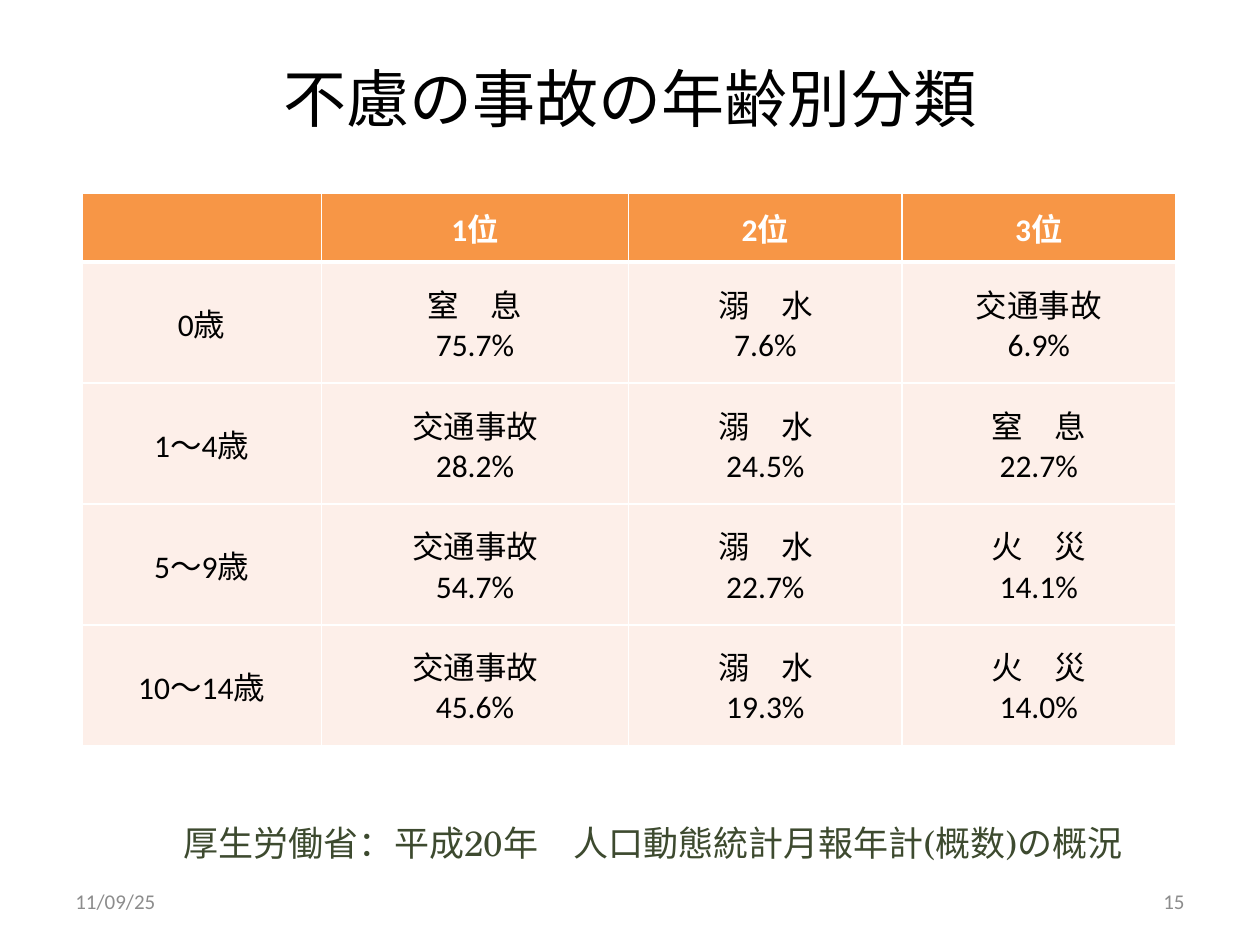
from lxml import etree
from pptx import Presentation
from pptx.dml.color import RGBColor
from pptx.enum.text import MSO_ANCHOR, PP_ALIGN
from pptx.oxml.ns import qn
from pptx.util import Inches, Pt

LEFT, CENTER, RIGHT = PP_ALIGN.LEFT, PP_ALIGN.CENTER, PP_ALIGN.RIGHT
TOP, MIDDLE = MSO_ANCHOR.TOP, MSO_ANCHOR.MIDDLE

BLACK = RGBColor(0x00, 0x00, 0x00)
WHITE = RGBColor(0xFF, 0xFF, 0xFF)
ORANGE = RGBColor(0xF7, 0x96, 0x46)
PALE_ORANGE = RGBColor(0xFD, 0xEF, 0xE9)
OLIVE = RGBColor(0x3D, 0x4A, 0x2F)
GREY = RGBColor(0x8C, 0x8C, 0x8C)

BODY_FONT = "Calibri"
SERIF_FONT = "TeX Gyre Schola"

COLUMN_WIDTHS = [1.9, 2.44, 2.17, 2.17]
HEADER_HEIGHT, ROW_HEIGHT = 0.55, 0.96
RANKING = [
    ["", "1位", "2位", "3位"],
    ["0歳", "窒　息\n75.7%", "溺　水\n7.6%", "交通事故\n6.9%"],
    ["1～4歳", "交通事故\n28.2%", "溺　水\n24.5%", "窒　息\n22.7%"],
    ["5～9歳", "交通事故\n54.7%", "溺　水\n22.7%", "火　災\n14.1%"],
    ["10～14歳", "交通事故\n45.6%", "溺　水\n19.3%", "火　災\n14.0%"],
]


def write(frame, text, size, font, color, align=LEFT, bold=False):
    frame.text = text
    for paragraph in frame.paragraphs:
        paragraph.alignment = align
        paragraph.font.size = Pt(size)
        paragraph.font.name = font
        paragraph.font.bold = bold
        paragraph.font.color.rgb = color


def add_label(slide, box, text, size, font, color, align=LEFT, anchor=MIDDLE):
    frame = slide.shapes.add_textbox(*map(Inches, box)).text_frame
    frame.word_wrap = True
    frame.vertical_anchor = anchor
    write(frame, text, size, font, color, align)


def set_borders(cell, widths):
    """Draw white cell borders; widths in points, keyed by side."""
    properties = cell._tc.get_or_add_tcPr()
    # Border lines must come before the fill, in the order L, R, T, B
    for index, side in enumerate("LRTB"):
        line = etree.Element(qn(f"a:ln{side}"), w=str(Pt(widths[side])))
        fill = etree.SubElement(line, qn("a:solidFill"))
        etree.SubElement(fill, qn("a:srgbClr"), val=str(WHITE))
        properties.insert(index, line)


def add_ranking_table(slide, box):
    table = slide.shapes.add_table(
        len(RANKING), len(COLUMN_WIDTHS), *map(Inches, box)).table
    for column, width in zip(table.columns, COLUMN_WIDTHS):
        column.width = Inches(width)
    for r, texts in enumerate(RANKING):
        header = r == 0
        table.rows[r].height = Inches(HEADER_HEIGHT if header else ROW_HEIGHT)
        # The rule below the header is thicker
        borders = {"L": 1, "R": 1, "T": 3 if r == 1 else 1, "B": 3 if header else 1}
        for c, text in enumerate(texts):
            cell = table.cell(r, c)
            cell.vertical_anchor = MIDDLE
            cell.fill.solid()
            cell.fill.fore_color.rgb = ORANGE if header else PALE_ORANGE
            set_borders(cell, borders)
            write(cell.text_frame, text, 18, BODY_FONT,
                  WHITE if header else BLACK, CENTER, bold=header)


def add_footer(slide, box):
    left, top, width, height = box
    part = 2.33
    add_label(slide, (left, top, part, height), "11/09/25", 12, BODY_FONT, GREY)
    add_label(slide, (left + width - part, top, part, height), "15", 12,
              BODY_FONT, GREY, RIGHT)


def main():
    deck = Presentation()
    deck.slide_width, deck.slide_height = Inches(10), Inches(7.5)
    slide = deck.slides.add_slide(deck.slide_layouts[6])

    # Title
    add_label(slide, (1, 0.3, 8, 0.95), "不慮の事故の年齢別分類", 36,
              SERIF_FONT, BLACK, CENTER)
    # Causes of accidents by age
    add_ranking_table(slide, (0.65, 1.53, 8.67, 4.4))
    # Source of the figures
    add_label(slide, (1.36, 6.47, 7.99, 0.44),
              "厚生労働省：平成20年　人口動態統計月報年計(概数)の概況", 20,
              SERIF_FONT, OLIVE, anchor=TOP)
    # Date and slide number
    add_footer(slide, (0.5, 6.95, 9, 0.4))

    deck.save("out.pptx")


if __name__ == "__main__":
    main()
